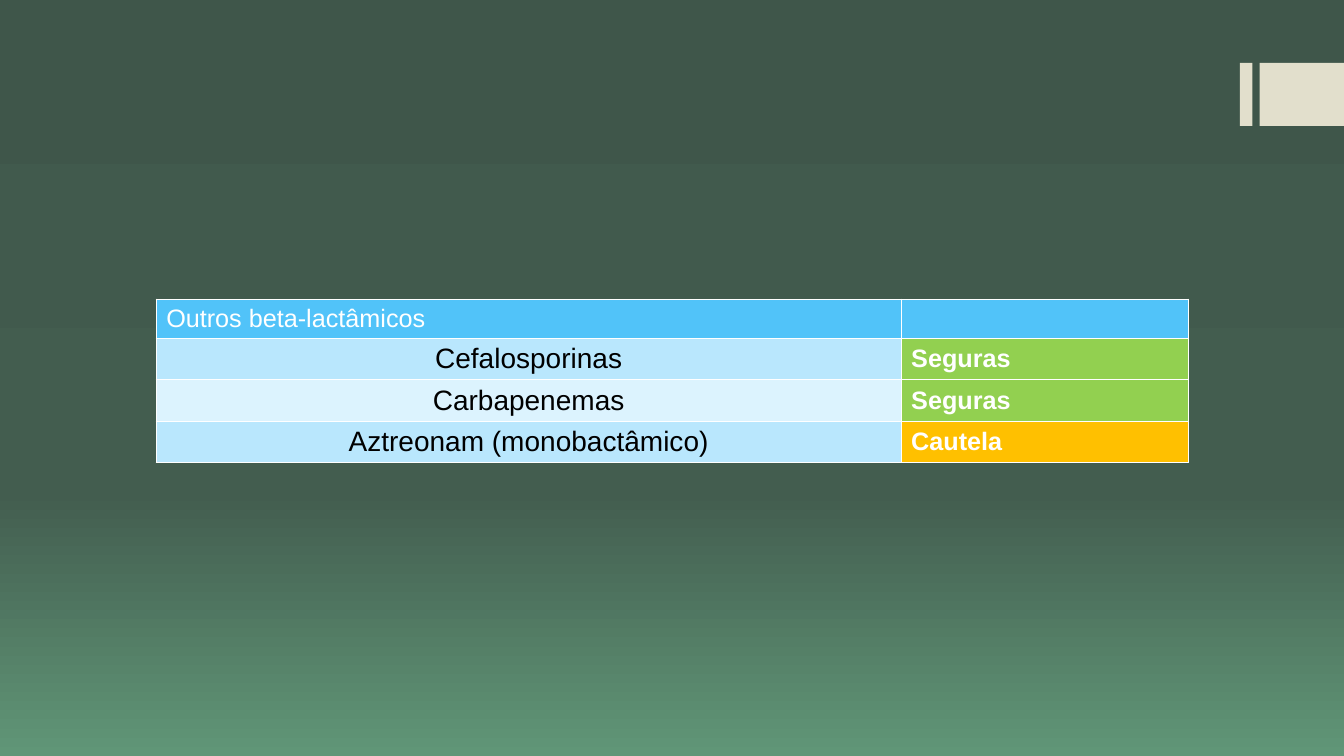
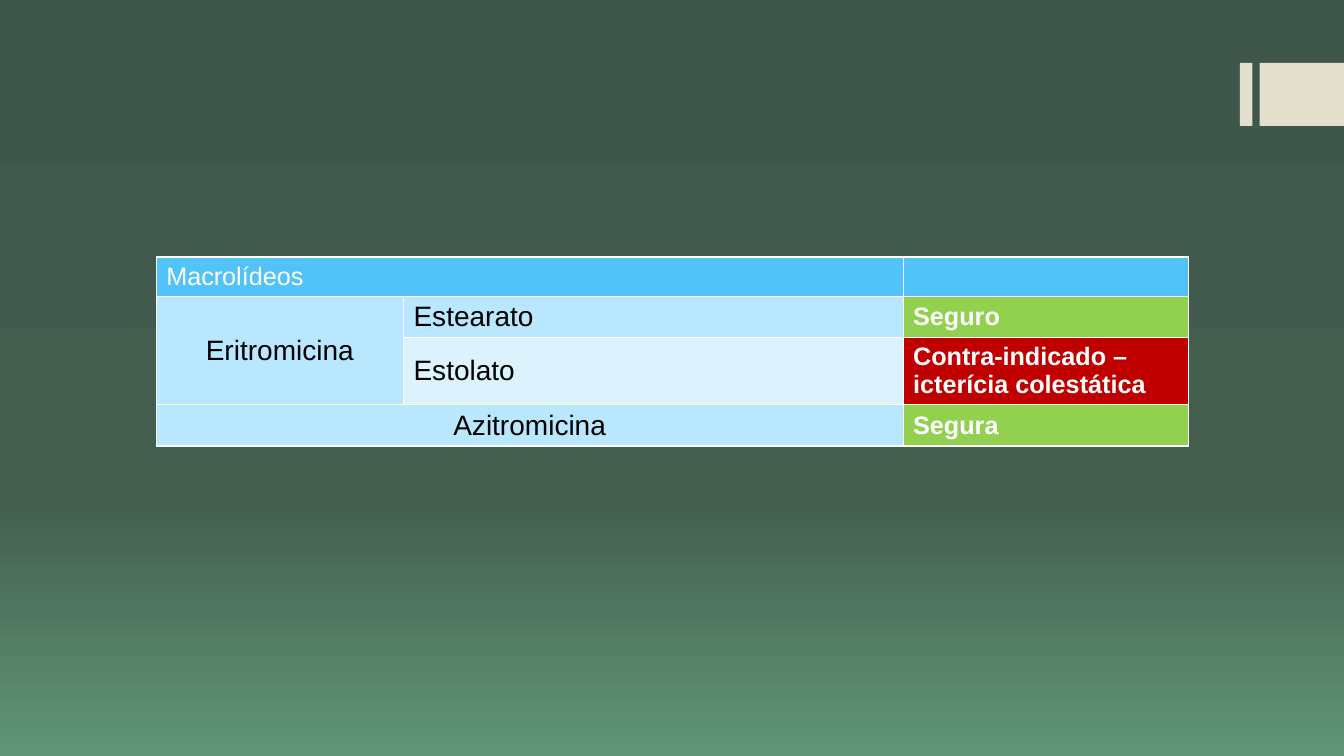
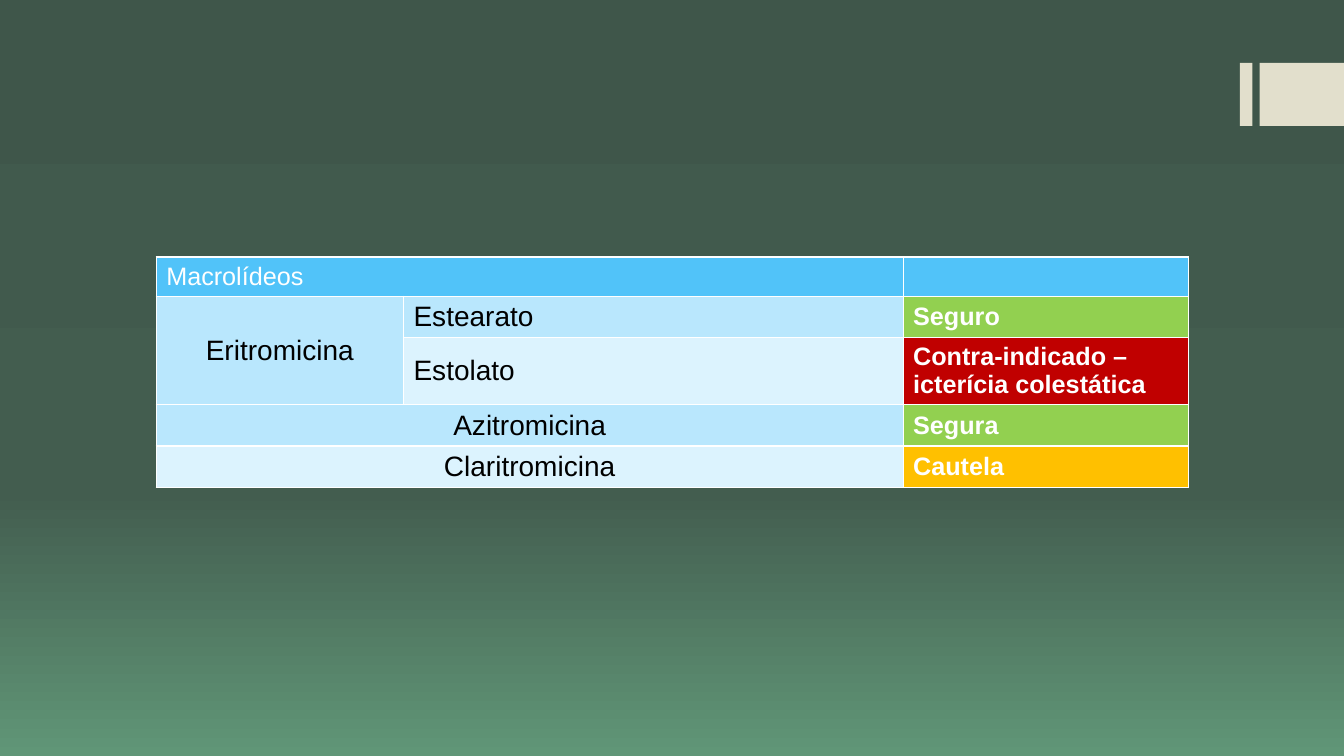
from dataclasses import dataclass

from lxml import etree
from pptx import Presentation
from pptx.dml.color import RGBColor
from pptx.enum import shapes, text
from pptx.oxml import ns
from pptx.util import Pt


@dataclass(frozen=True)
class Theme:
    font: str = "Arial"
    background: tuple = ((0, "3F564A"), (65, "435D4F"), (100, "609677"))
    band: str = "E2DFCC"
    header: str = "51C3F9"
    dark_row: str = "B9E7FD"
    light_row: str = "DCF3FE"
    safe: str = "92D050"
    caution: str = "FFC000"
    forbidden: str = "C00000"
    white: str = "FFFFFF"
    black: str = "000000"
    label_size: int = 18
    drug_size: int = 20
    border: int = 1


THEME = Theme()
LEFT, CENTER = text.PP_ALIGN.LEFT, text.PP_ALIGN.CENTER
TABLE_LEFT = 111.6
HEADER_HEIGHT, ROW_HEIGHT, TALL_HEIGHT = 27.4, 29.6, 47.9


def write(frame, wording, size=THEME.label_size, color=THEME.white, bold=False, align=LEFT):
    paragraph = frame.paragraphs[0]
    paragraph.alignment = align
    run = paragraph.add_run()
    run.text = wording
    run.font.name = THEME.font
    run.font.size = Pt(size)
    run.font.bold = bold
    run.font.color.rgb = RGBColor.from_string(color)


class Deck:
    def __init__(self, theme):
        self.theme = theme
        self.slide = None
        self.presentation = Presentation()
        self.presentation.slide_width = Pt(960)
        self.presentation.slide_height = Pt(540)
        self.paint_background()

    def paint_background(self):
        master = self.presentation.slide_master
        fill = master.background.fill
        fill.gradient()
        fill.gradient_angle = 270
        stops = master.element.find(".//" + ns.qn("a:gsLst"))
        for stop in list(stops):
            stops.remove(stop)
        for percent, color in self.theme.background:
            stop = etree.SubElement(stops, ns.qn("a:gs"), pos=str(percent * 1000))
            etree.SubElement(stop, ns.qn("a:srgbClr"), val=color)

    def new_slide(self):
        self.slide = self.presentation.slides.add_slide(self.presentation.slide_layouts[6])
        for left, width in ((885.6, 9), (899.8, 60.2)):
            self.band(left, 45, width, 45)

    def band(self, left, top, width, height):
        band = self.slide.shapes.add_shape(
            shapes.MSO_SHAPE.RECTANGLE, Pt(left), Pt(top), Pt(width), Pt(height))
        band.shadow.inherit = False
        band.fill.solid()
        band.fill.fore_color.rgb = RGBColor.from_string(self.theme.band)
        band.line.fill.background()

    def style_cell(self, cell, color):
        properties = cell._tc.get_or_add_tcPr()
        for side in ("lnL", "lnR", "lnT", "lnB"):
            line = etree.SubElement(
                properties, ns.qn("a:" + side), w=str(Pt(self.theme.border)))
            fill = etree.SubElement(line, ns.qn("a:solidFill"))
            etree.SubElement(fill, ns.qn("a:srgbClr"), val=self.theme.white)
        cell.fill.solid()
        cell.fill.fore_color.rgb = RGBColor.from_string(color)
        cell.vertical_anchor = text.MSO_ANCHOR.MIDDLE
        cell.margin_top = cell.margin_bottom = Pt(3)

    def table(self, top, widths, heights, title, drugs, verdicts, merges=()):
        theme = self.theme
        grid = self.slide.shapes.add_table(
            len(heights), len(widths), Pt(TABLE_LEFT), Pt(top),
            Pt(sum(widths)), Pt(sum(heights))).table
        grid.first_row = grid.horz_banding = False
        for column, width in zip(grid.columns, widths):
            column.width = Pt(width)
        for row, height in zip(grid.rows, heights):
            row.height = Pt(height)

        last = len(widths) - 1
        fills = [theme.header] + [color for _, color in verdicts]
        for row in range(len(heights)):
            stripe = theme.dark_row if row % 2 else theme.light_row
            for column in range(len(widths)):
                color = fills[row] if row == 0 or column == last else stripe
                self.style_cell(grid.cell(row, column), color)
        for start, end in merges:
            grid.cell(*start).merge(grid.cell(*end))

        write(grid.cell(0, 0).text_frame, title)
        for row, column, drug in drugs:
            write(grid.cell(row, column).text_frame, drug, size=theme.drug_size,
                  color=theme.black, align=LEFT if column else CENTER)
        for row, (verdict, _) in enumerate(verdicts, 1):
            write(grid.cell(row, last).text_frame, verdict, bold=True)

    def beta_lactams(self):
        self.new_slide()
        self.table(
            213.8, (532.1, 205.2), [HEADER_HEIGHT] + [ROW_HEIGHT] * 3,
            "Outros beta-lactâmicos",
            [(1, 0, "Cefalosporinas"), (2, 0, "Carbapenemas"),
             (3, 0, "Aztreonam (monobactâmico)")],
            [("Seguras", self.theme.safe), ("Seguras", self.theme.safe),
             ("Cautela", self.theme.caution)])

    def macrolides(self, extra_drugs=()):
        self.new_slide()
        single_drugs = [("Azitromicina", "Segura", self.theme.safe), *extra_drugs]
        drugs = [(1, 0, "Eritromicina"), (1, 1, "Estearato"), (2, 1, "Estolato")]
        verdicts = [("Seguro", self.theme.safe),
                    ("Contra-indicado – icterícia colestática", self.theme.forbidden)]
        merges = [((0, 0), (0, 1)), ((1, 0), (2, 0))]
        for row, (drug, verdict, color) in enumerate(single_drugs, 3):
            drugs.append((row, 0, drug))
            verdicts.append((verdict, color))
            merges.append(((row, 0), (row, 1)))
        heights = [HEADER_HEIGHT, ROW_HEIGHT, TALL_HEIGHT] + [ROW_HEIGHT] * len(single_drugs)
        self.table(183.6, (176.6, 356.9, 203.8), heights, "Macrolídeos",
                   drugs, verdicts, merges)


def main():
    deck = Deck(THEME)
    deck.beta_lactams()
    deck.macrolides()
    deck.macrolides([("Claritromicina", "Cautela", THEME.caution)])
    deck.presentation.save("out.pptx")


if __name__ == "__main__":
    main()
